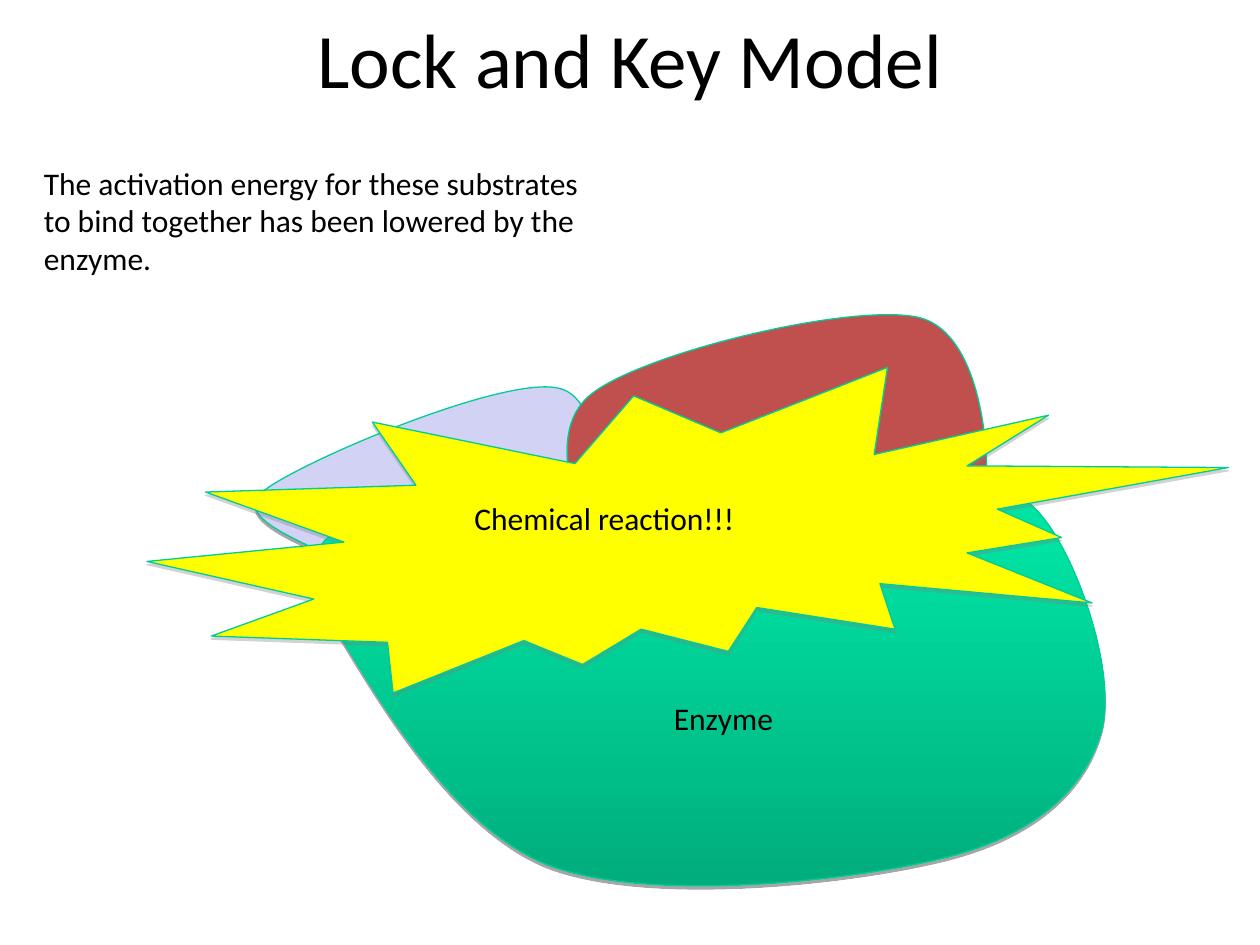
import copy
from dataclasses import dataclass

import lxml.etree
import pptx
import pptx.dml.color
import pptx.enum.shapes
import pptx.enum.text
import pptx.oxml.ns
import pptx.util

Pt = pptx.util.Pt
qn = pptx.oxml.ns.qn
Point = tuple[float, float]
OUTLINE = "00CC98"


@dataclass
class Blob:
    """Closed curve: a start point, then rows of two controls and an end point."""
    fills: list[tuple[float, str]]
    start: Point
    curves: list[tuple[float, ...]]


@dataclass
class Label:
    text: str
    box: tuple[float, float, float, float]
    size: float = 18
    centred: bool = False


LILAC_SUBSTRATE = Blob([(0, "D2D2F4")], (191.5, 319.7), [
    (205.2, 328.3, 213.8, 322.6, 229.7, 332.6),
    (246.2, 342, 275.8, 383.8, 288.7, 377.3),
    (301, 370.8, 298.8, 304.6, 306.7, 295.2),
    (315.4, 285.8, 337, 334.8, 339.1, 322.6),
    (341.3, 310.3, 350.6, 228.2, 319, 221.8),
    (287.3, 214.6, 172.8, 263.5, 151.2, 280.1),
    (129.6, 295.9, 178.6, 311, 191.5, 319.7),
])
RED_SUBSTRATE = Blob([(0, "C0504D")], (337.7, 225.4), [
    (307.4, 249.8, 336.2, 304.6, 344.2, 327.6),
    (352.1, 350.6, 376.6, 370.8, 386.6, 362.9),
    (396.7, 355, 388.8, 280.8, 403.2, 279.4),
    (418.3, 277.2, 459.4, 354.2, 476.6, 352.1),
    (493.2, 349.9, 491, 278.6, 505.4, 266.4),
    (519.8, 254.2, 559.4, 293, 563, 279.4),
    (565.9, 265, 562.3, 190.1, 524.9, 181.4),
    (486.7, 172.8, 367.2, 201.6, 337.7, 225.4),
])
ENZYME = Blob([(0, "00E9A6"), (0.2, "00E3A3"), (1, "00AD7B")], (195.1, 305.3), [
    (180, 304.6, 172.1, 328.3, 192.2, 360),
    (211.7, 391, 256.3, 472.3, 313.9, 494.6),
    (372.2, 516.2, 486.7, 503.3, 539.3, 490.3),
    (591.8, 477.4, 619.9, 450.7, 629.3, 418.3),
    (638.6, 386.6, 617, 321.8, 596.2, 295.9),
    (575.3, 269.3, 525.6, 252.7, 504.7, 259.9),
    (483.8, 267.1, 488.2, 336.2, 470.9, 339.1),
    (454.3, 341.3, 419.8, 271.4, 404.6, 273.6),
    (389.5, 275.8, 396, 348.5, 379.4, 351.4),
    (362.9, 353.5, 320.4, 286.6, 304.6, 288.7),
    (288, 290.9, 301, 360.7, 282.2, 363.6),
    (263.5, 366.5, 209.5, 306, 195.1, 305.3),
])
TITLE = Label("Lock and Key Model", (54, 0, 612, 66), 44, True)
EXPLANATION = Label("The activation energy for these substrates to bind together "
                    "has been lowered by the enzyme.", (18, 90, 330, 94))
ENZYME_NAME = Label("Enzyme", (378, 396, 210, 37))
REACTION = Label("Chemical reaction!!!", (264, 281.5, 264, 36))


def rgb(colour: str) -> pptx.dml.color.RGBColor:
    return pptx.dml.color.RGBColor.from_string(colour)


def style(sp, fills: list[tuple[float, str]], shadow: str) -> None:
    """Apply a solid or top-to-bottom gradient fill, the outline and a drop shadow."""
    if len(fills) == 1:
        sp.fill.solid()
        sp.fill.fore_color.rgb = rgb(fills[0][1])
    else:
        sp.fill.gradient()
        sp.fill.gradient_angle = 270
        stops = sp._element.spPr.find(".//" + qn("a:gsLst"))
        for _ in range(len(fills) - len(stops)):
            stops.append(copy.deepcopy(stops[-1]))
        for stop, (position, colour) in zip(sp.fill.gradient_stops, fills):
            stop.position = position
            stop.color.rgb = rgb(colour)
    sp.line.color.rgb = rgb(OUTLINE)
    sp.line.width = Pt(0.75)
    sp.shadow.inherit = False
    effects = sp._element.spPr.find(qn("a:effectLst"))
    outer = lxml.etree.SubElement(effects, qn("a:outerShdw"), blurRad="0",
                                  dist=str(Pt(1.8)), dir="5400000", rotWithShape="0")
    tint = lxml.etree.SubElement(outer, qn("a:srgbClr"), val=shadow)
    lxml.etree.SubElement(tint, qn("a:alpha"), val="35000")


def sample(start: Point, curves: list[tuple[float, ...]], steps: int = 16) -> list[Point]:
    """Points along the curves, which give the true bounds of the outline."""
    points = []
    for x1, y1, x2, y2, x3, y3 in curves:
        for t in (i / steps for i in range(1, steps + 1)):
            u = 1 - t
            weights = (u ** 3, 3 * u * u * t, 3 * u * t * t, t ** 3)
            points.append((sum(w * x for w, x in zip(weights, (start[0], x1, x2, x3))),
                           sum(w * y for w, y in zip(weights, (start[1], y1, y2, y3)))))
        start = (x3, y3)
    return points


def draw_blob(shapes, blob: Blob) -> None:
    builder = shapes.build_freeform(*map(Pt, blob.start))
    builder.add_line_segments([(Pt(x), Pt(y)) for x, y in sample(blob.start, blob.curves)])
    sp = builder.convert_to_shape()
    outline = sp._element.spPr.find(".//" + qn("a:path"))
    for child in list(outline):
        outline.remove(child)

    def command(tag: str, *coords: float) -> None:
        el = lxml.etree.SubElement(outline, qn(tag))
        for x, y in zip(coords[::2], coords[1::2]):
            lxml.etree.SubElement(el, qn("a:pt"), x=str(Pt(x) - sp.left), y=str(Pt(y) - sp.top))

    command("a:moveTo", *blob.start)
    for curve in blob.curves:
        command("a:cubicBezTo", *curve)
    command("a:close")
    style(sp, blob.fills, "000000")


def draw_label(shapes, label: Label) -> None:
    tf = shapes.add_textbox(*map(Pt, label.box)).text_frame
    tf.word_wrap = True
    tf.text = label.text
    p = tf.paragraphs[0]
    if label.centred:
        tf.vertical_anchor = pptx.enum.text.MSO_ANCHOR.MIDDLE
        p.alignment = pptx.enum.text.PP_ALIGN.CENTER
    font = p.runs[0].font
    font.name, font.size = "Calibri", Pt(label.size)
    font.color.rgb = rgb("000000")


def draw_reaction(shapes) -> None:
    group = shapes.add_group_shape().shapes
    sp = group.add_shape(pptx.enum.shapes.MSO_SHAPE.EXPLOSION2,
                         Pt(84), Pt(210), Pt(618), Pt(186))
    style(sp, [(0, "FFFF00")], "808080")
    draw_label(group, REACTION)


def main() -> None:
    prs = pptx.Presentation()
    prs.slide_width, prs.slide_height = Pt(720), Pt(540)
    s = prs.slides.add_slide(prs.slide_layouts[6])
    draw_blob(s.shapes, LILAC_SUBSTRATE)
    draw_blob(s.shapes, RED_SUBSTRATE)
    draw_label(s.shapes, TITLE)
    draw_blob(s.shapes, ENZYME)
    draw_label(s.shapes, EXPLANATION)
    draw_label(s.shapes, ENZYME_NAME)
    draw_reaction(s.shapes)
    prs.save("out.pptx")


if __name__ == "__main__":
    main()
